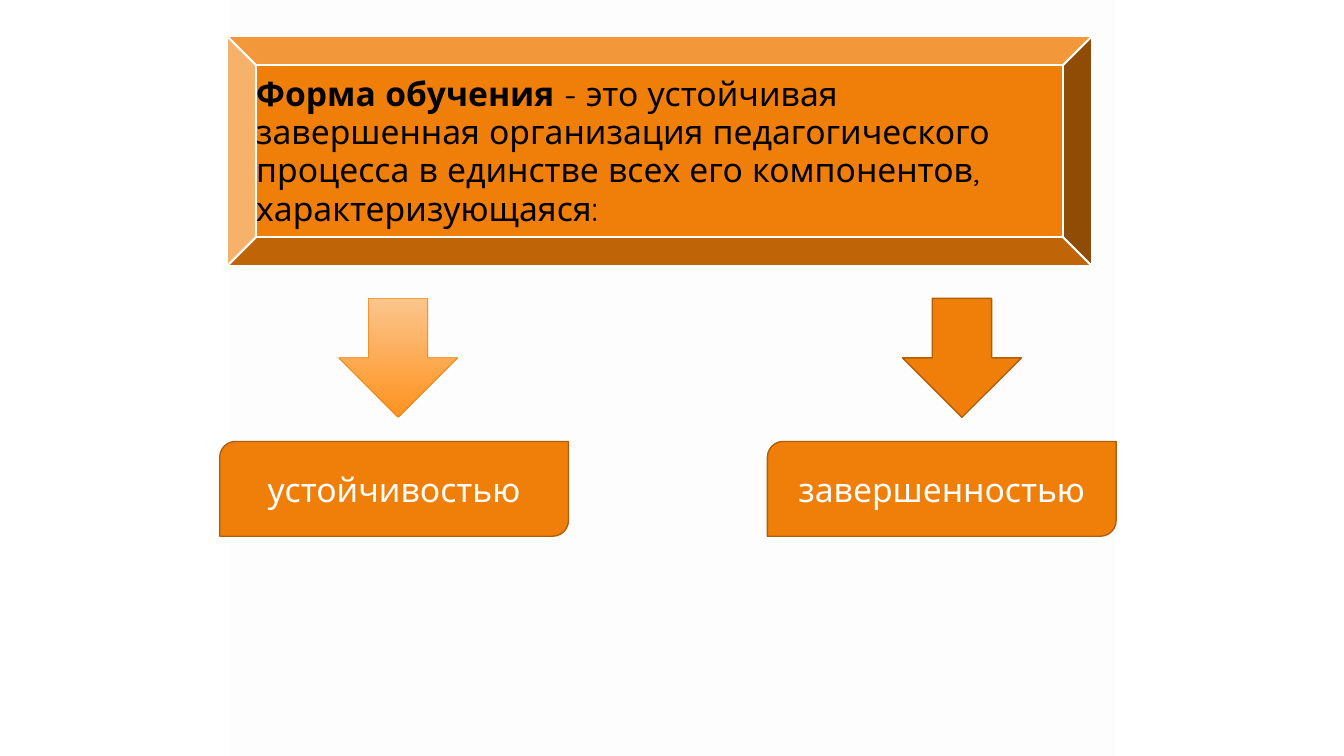
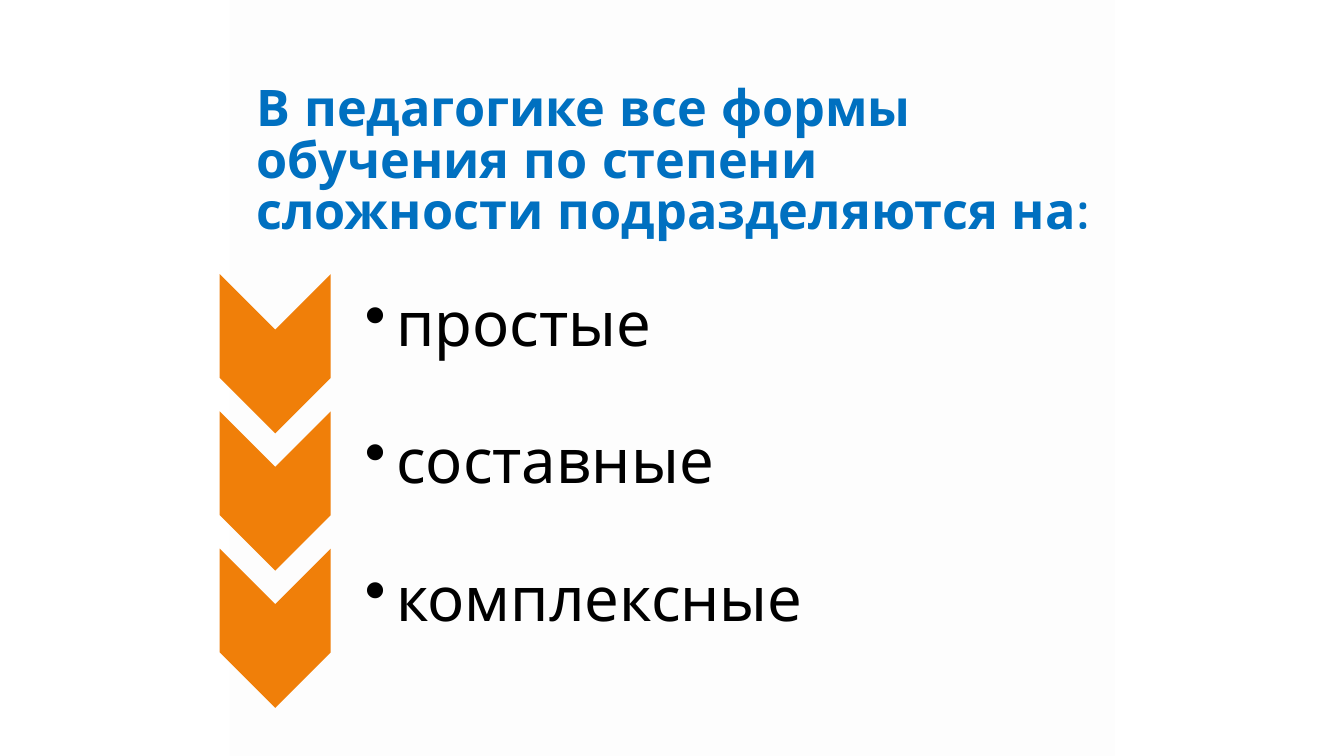
from lxml import etree
from pptx import Presentation
from pptx.dml.color import RGBColor
from pptx.enum.shapes import MSO_SHAPE
from pptx.enum.text import MSO_ANCHOR, PP_ALIGN
from pptx.oxml.ns import qn
from pptx.util import Inches, Pt

BEVEL = MSO_SHAPE.BEVEL
CHEVRON = MSO_SHAPE.CHEVRON
DOWN_ARROW = MSO_SHAPE.DOWN_ARROW
RECTANGLE = MSO_SHAPE.RECTANGLE
ROUND_DIAGONAL = MSO_SHAPE.ROUND_2_DIAG_RECTANGLE
TOP, MIDDLE, BOTTOM = MSO_ANCHOR.TOP, MSO_ANCHOR.MIDDLE, MSO_ANCHOR.BOTTOM
LEFT, CENTER = PP_ALIGN.LEFT, PP_ALIGN.CENTER

FONT = "Quicksand"
ORANGE, BROWN, PALE, BRIGHT = "F07F09", "B25E07", "FBC58C", "FF921F"
BLUE, BLACK, WHITE, PANEL = "0070C0", "000000", "FFFFFF", "FDFDFD"
rgb = RGBColor.from_string

prs = Presentation()
prs.slide_width = Inches(13.33)
prs.slide_height = Inches(7.5)
COL = prs.slide_width / 100
ROW = prs.slide_height / 100


def draw(slide, geometry, col, row, cols, rows, fill=ORANGE, line=None, weight=1):
    box = [round(n) for n in (col * COL, row * ROW, cols * COL, rows * ROW)]
    if geometry is None:
        return slide.shapes.add_textbox(*box)
    shape = slide.shapes.add_shape(geometry, *box)
    shape.shadow.inherit = False
    shape.fill.solid()
    shape.fill.fore_color.rgb = rgb(fill)
    if line:
        shape.line.color.rgb = rgb(line)
        shape.line.width = Pt(weight)
    else:
        shape.line.fill.background()
    return shape


def write(shape, text, size=24, color=BLACK, bold=False, lead="", align=LEFT,
          anchor=TOP, spacing=1.0, margins=(0.98, 0.93, 0.98, 0.93), bullet=None):
    frame = shape.text_frame
    frame.word_wrap = True
    frame.vertical_anchor = anchor
    left, top, right, bottom = margins
    frame.margin_left, frame.margin_right = round(left * COL), round(right * COL)
    frame.margin_top, frame.margin_bottom = round(top * ROW), round(bottom * ROW)
    paragraph = frame.paragraphs[0]
    paragraph.alignment = align
    paragraph.line_spacing = spacing
    if bullet:
        properties = paragraph._p.get_or_add_pPr()
        indent = round(2.33 * COL)
        properties.set("marL", str(indent))
        properties.set("indent", str(-indent))
        etree.SubElement(properties, qn("a:buChar")).set("char", bullet)
    for words, strong in ((lead, True), (text, bold)):
        if words:
            run = paragraph.add_run()
            run.text = words
            run.font.name = FONT
            run.font.size = Pt(size)
            run.font.bold = strong
            run.font.color.rgb = rgb(color)


definition, classification = [prs.slides.add_slide(prs.slide_layouts[6]) for _ in range(2)]
for slide in (definition, classification):
    draw(slide, RECTANGLE, 17.1, 0, 65.85, 100, fill=PANEL)

draw(definition, BEVEL, 16.9, 4.8, 64.35, 30.4, line=WHITE, weight=1.5)
write(draw(definition, None, 18.08, 9.07, 60, 20.93),
      "- это устойчивая завершенная организация педагогического процесса "
      "в единстве всех его компонентов, характеризующаяся:",
      lead="Форма обучения ", spacing=0.95)

arrows = []
for trait, trait_col, arrow_col in (("устойчивостью", 16.35, 25.2),
                                    ("завершенностью", 57.1, 67.15)):
    arrows.append(draw(definition, DOWN_ARROW, arrow_col, 39.47, 8.85, 15.73, line=BROWN))
    write(draw(definition, ROUND_DIAGONAL, trait_col, 58.4, 25.95, 12.53, line=BROWN),
          trait, color=WHITE, align=CENTER, anchor=MIDDLE)

pale_arrow = arrows[0]
pale_arrow.fill.gradient()
pale_arrow.fill.gradient_angle = 270
for stop, position, shade in zip(pale_arrow.fill.gradient_stops, (0, 1), (PALE, BRIGHT)):
    stop.position = position
    stop.color.rgb = rgb(shade)
pale_arrow.line.color.rgb = rgb(ORANGE)
pale_arrow.line.width = Pt(0.5)

write(draw(classification, None, 18.08, 10.67, 64.35, 22),
      "В педагогике все формы обучения по степени сложности подразделяются на:",
      size=36, color=BLUE, bold=True, anchor=BOTTOM, spacing=0.85)

for index, form in enumerate(("простые", "составные", "комплексные")):
    step = index * 18.15
    chevron = draw(classification, CHEVRON, 14.55, 39.47 + step, 11.85, 14.67)
    chevron.rotation = 90
    write(draw(classification, None, 24.6, 37.07 + step, 58, 12.27), form, size=44,
          anchor=MIDDLE, spacing=0.9, margins=(2.55, 0.4, 0.23, 0.4), bullet="•")

prs.save("out.pptx")
